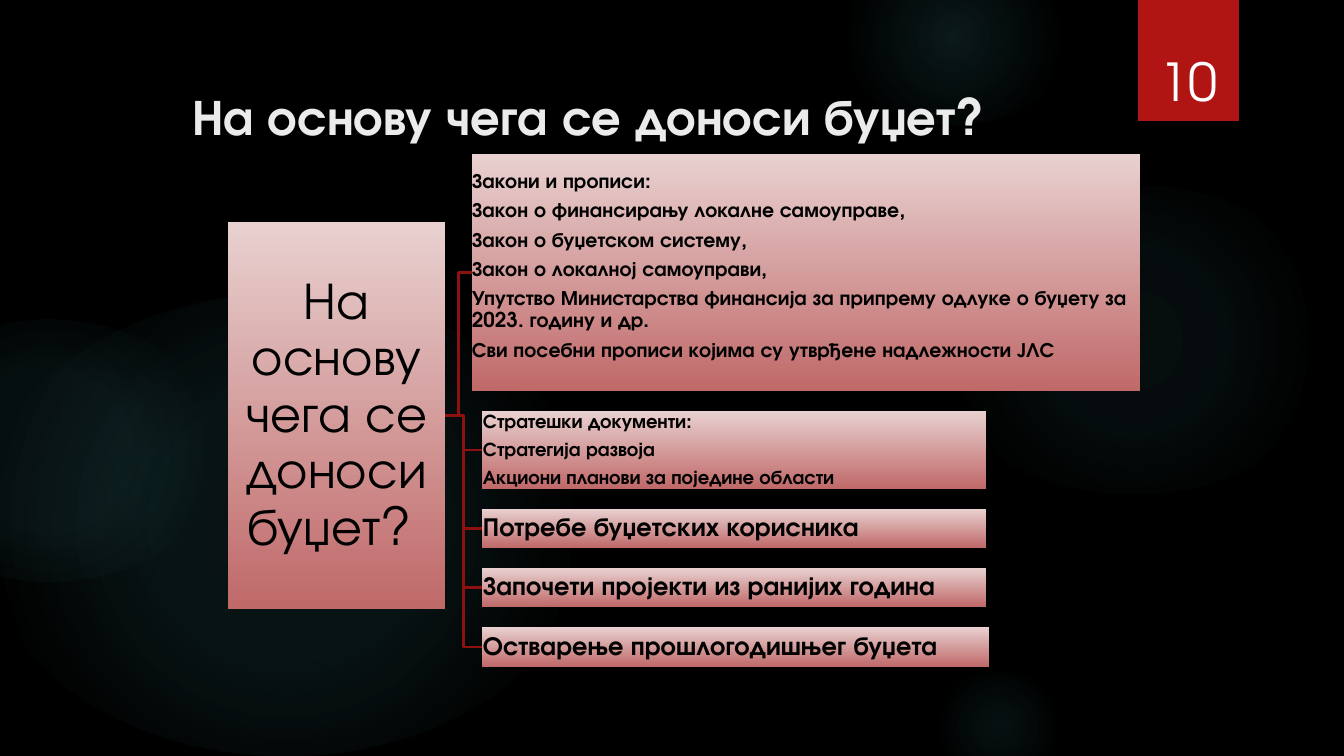
from lxml.etree import SubElement
from pptx import Presentation
from pptx.dml.color import RGBColor
from pptx.enum.shapes import MSO_SHAPE
from pptx.enum.text import MSO_ANCHOR, PP_ALIGN
from pptx.oxml.ns import qn
from pptx.util import Pt

PX = 914400 / 134.4
FONT = "TeX Gyre Adventor"
BLACK = RGBColor(0x00, 0x00, 0x00)
WHITE = RGBColor(0xFF, 0xFF, 0xFF)
PALE = RGBColor(0xEB, 0xEB, 0xEB)
RED = RGBColor(0xB0, 0x15, 0x13)
WINE = RGBColor(0x8D, 0x11, 0x0F)
BLUSH = RGBColor(0xE8, 0xD1, 0xD0)
ROSE = RGBColor(0xC0, 0x69, 0x69)
TEAL = RGBColor(0x50, 0xB9, 0xC1)

TITLE = "На основу чега се доноси буџет?"
# Box, then (stop %, opacity %) from the centre outwards
GLOWS = [
    ((926, 185, 414, 310), [(0, 7), (36, 6), (69, 0)]),
    ((836, -51, 235, 176), [(0, 14), (36, 7), (73, 0)]),
    ((926, 672, 145, 109), [(0, 9), (36, 5), (66, 0)]),
    ((-23, 294, 616, 462), [(0, 11), (36, 10), (75, 0)]),
    ((-124, 320, 347, 261), [(0, 8), (36, 8), (72, 0)]),
]
# Left, width, height, font size, lines
CARDS = [
    (472, 668, 237, 11, [
        "Закони и прописи:",
        "Закон о финансирању локалне самоуправе,",
        "Закон о буџетском систему,",
        "Закон о локалној самоуправи,",
        "Упутство Министарства финансија за припрему одлуке о буџету за 2023. годину и др.",
        "Сви посебни прописи којима су утврђене надлежности ЈЛС"]),
    (482, 504, 78, 10.5, [
        "Стратешки документи:",
        "Стратегија развоја",
        "Акциони планови за поједине области"]),
    (482, 504, 39, 14, ["Потребе буџетских корисника"]),
    (482, 504, 39, 14, ["Започети пројекти из ранијих година"]),
    (482, 507, 40, 14, ["Остварење прошлогодишњег буџета"]),
]
GAP = 20


def px(n):
    return round(n * PX)


def add_block(slide, box, kind=MSO_SHAPE.RECTANGLE):
    """Add a shape without line or shadow."""
    block = slide.shapes.add_shape(kind, *map(px, box))
    block.shadow.inherit = False
    block.line.fill.background()
    return block


def write(shape, lines, size, color=BLACK, bold=False, align=PP_ALIGN.LEFT,
          anchor=MSO_ANCHOR.MIDDLE, inset=(1, 1, 1, 1), tight=True):
    """Fill a shape with paragraphs; inset is left, top, right, bottom."""
    frame = shape.text_frame
    frame.word_wrap = True
    frame.vertical_anchor = anchor
    (frame.margin_left, frame.margin_top,
     frame.margin_right, frame.margin_bottom) = map(px, inset)
    for i, line in enumerate(lines):
        para = frame.add_paragraph() if i else frame.paragraphs[0]
        para.text = line
        para.alignment = align
        if tight:
            para.line_spacing = 0.9
            para.space_after = Pt(round(size * 0.35, 1))
        font = para.font
        font.name, font.size, font.bold = FONT, Pt(size), bold
        font.color.rgb = color


def add_glow(slide, box, stops):
    """Add an ellipse that fades out from its centre."""
    glow = add_block(slide, box, MSO_SHAPE.OVAL)
    glow.fill.gradient()
    grad = glow._element.spPr.find(qn("a:gradFill"))
    for child in list(grad):
        grad.remove(child)
    group = SubElement(grad, qn("a:gsLst"))
    for pos, alpha in stops:
        stop = SubElement(group, qn("a:gs"), pos=str(pos * 1000))
        color = SubElement(stop, qn("a:srgbClr"), val=str(TEAL))
        SubElement(color, qn("a:alpha"), val=str(alpha * 1000))
    path = SubElement(grad, qn("a:path"), path="circle")
    SubElement(path, qn("a:fillToRect"), l="50000", t="50000", r="50000", b="50000")


def add_card(slide, box):
    card = add_block(slide, box)
    card.fill.gradient()
    card.fill.gradient_angle = 270
    for stop, color in zip(card.fill.gradient_stops, (BLUSH, ROSE)):
        stop.color.rgb = color
    return card


def add_elbow(slide, start, end):
    (x1, y1), (x2, y2) = start, end
    mid = (x1 + x2) / 2
    points = [(mid, y1), (mid, y2), (x2, y2)]
    pen = slide.shapes.build_freeform(px(x1), px(y1))
    pen.add_line_segments([(px(x), px(y)) for x, y in points], close=False)
    elbow = pen.convert_to_shape()
    elbow.shadow.inherit = False
    elbow.fill.background()
    elbow.line.color.rgb = WINE
    elbow.line.width = Pt(1.5)


def add_header(slide, box):
    """Add the title and, at the right, the page number on its tab."""
    left, top, width, height = box
    tab = add_block(slide, (left + 959, top, 101, 121))
    tab.fill.solid()
    tab.fill.fore_color.rgb = RED
    write(tab, ["10"], 28, WHITE, align=PP_ALIGN.CENTER,
          anchor=MSO_ANCHOR.BOTTOM, inset=(4, 4, 4, 9), tight=False)
    title = slide.shapes.add_textbox(*map(px, (left, top + 75, width, height - 75)))
    write(title, [TITLE], 27, PALE, bold=True, inset=(13, 6, 13, 6), tight=False)


def add_tree(slide, box):
    """Add the root at the left and a stack of linked cards beside it."""
    left, top, width, height = box
    root = (left, top + 68, 217, 387)
    start = (left + root[2], root[1] + root[3] / 2)
    boxes = []
    for x, wide, high, *rest in CARDS:
        boxes.append((x, top, wide, high))
        top += high + GAP
    for x, y, wide, high in reversed(boxes):
        add_elbow(slide, start, (x, y + high / 2))
    write(add_card(slide, root), [TITLE + " "], 28,
          align=PP_ALIGN.CENTER, inset=(3, 3, 3, 3))
    for i, (spot, card) in enumerate(zip(boxes, CARDS)):
        size, lines = card[3:]
        style = {} if i else {"anchor": MSO_ANCHOR.TOP, "inset": (0, 17, 0, 0)}
        write(add_card(slide, spot), lines, size, bold=True, **style)


def main():
    deck = Presentation()
    deck.slide_width, deck.slide_height = px(1344), px(756)
    slide = deck.slides.add_slide(deck.slide_layouts[6])
    slide.background.fill.solid()
    slide.background.fill.fore_color.rgb = BLACK
    for box, stops in GLOWS:
        add_glow(slide, box, stops)
    add_header(slide, (179, 0, 1056, 156))
    add_tree(slide, (228, 154, 913, 515))
    deck.save("out.pptx")


if __name__ == "__main__":
    main()
